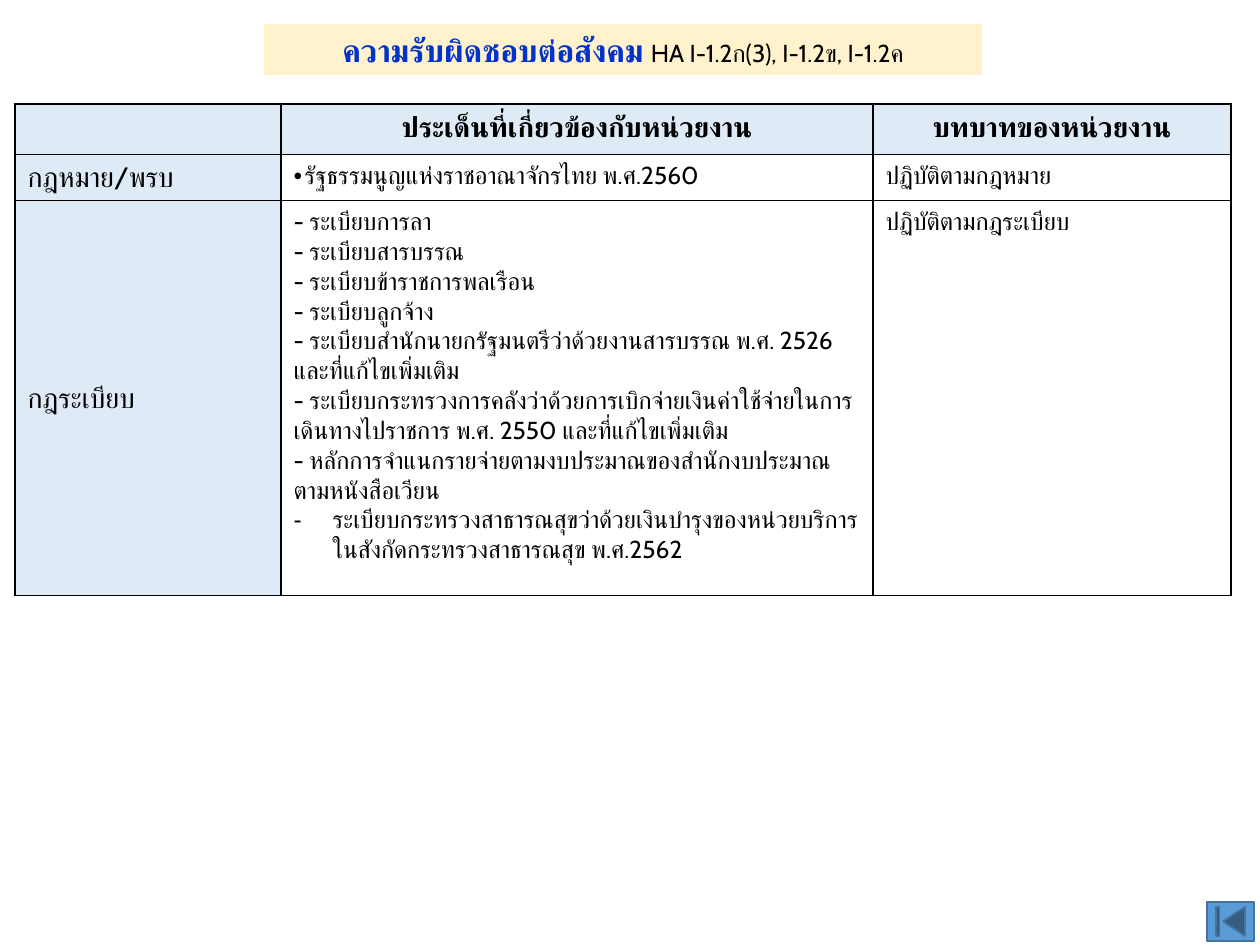
from lxml.etree import SubElement as Sub
from pptx import Presentation
from pptx.dml.color import RGBColor as RGB
from pptx.enum.shapes import MSO_SHAPE as Shape
from pptx.enum.text import MSO_ANCHOR as Anchor, PP_ALIGN as Align
from pptx.oxml.ns import qn
from pptx.util import Emu, Pt

FONT = "Cabin"
BLACK = RGB(0, 0, 0)
WHITE = RGB(255, 255, 255)
BLUE = RGB(0, 0x33, 0xCC)
CREAM = RGB(0xFF, 0xF2, 0xCC)
PALE = RGB(0xDE, 0xEB, 0xF7)
SKY = RGB(0x5B, 0x9B, 0xD5)
STEEL = RGB(0x43, 0x73, 0x9E)

COLS = [266, 592, 358]
ROWS = [46, 46, 395]

LAW = "รัฐธรรมนูญแห่งราชอาณาจักรไทย พ.ศ.2560"
RULES = [
    "- ระเบียบการลา",
    "- ระเบียบสารบรรณ",
    "- ระเบียบข้าราชการพลเรือน",
    "- ระเบียบลูกจ้าง",
    "- ระเบียบสำนักนายกรัฐมนตรีว่าด้วยงานสารบรรณ พ.ศ. 2526 และที่แก้ไขเพิ่มเติม",
    "- ระเบียบกระทรวงการคลังว่าด้วยการเบิกจ่ายเงินค่าใช้จ่ายในการเดินทางไปราชการ"
    " พ.ศ. 2550 และที่แก้ไขเพิ่มเติม",
    "- หลักการจำแนกรายจ่ายตามงบประมาณของสำนักงบประมาณ ตามหนังสือเวียน",
]
FUND = "ระเบียบกระทรวงสาธารณสุขว่าด้วยเงินบำรุงของหน่วยบริการในสังกัดกระทรวงสาธารณสุข พ.ศ.2562"


def px(n):
    return Emu(round(n * 914400 / 126))


def paint(item, color):
    item.fill.solid()
    item.fill.fore_color.rgb = color


def add_run(para, text, size, color=BLACK, bold=False):
    run = para.add_run()
    run.text = text
    for key, val in {"name": FONT, "size": Pt(size), "bold": bold}.items():
        setattr(run.font, key, val)
    run.font.color.rgb = color
    # Thai letters take the complex script font
    Sub(run.font._element, qn("a:cs"), typeface=FONT)


def add_mark(para, char, indent):
    props = para._p.get_or_add_pPr()
    props.set("marL", str(px(indent)))
    props.set("indent", str(-px(indent)))
    Sub(props, qn("a:buFont"), typeface="Arial")
    Sub(props, qn("a:buChar"), char=char)


def add_edges(cell):
    props = cell._tc.get_or_add_tcPr()
    for i, side in enumerate(("lnL", "lnR", "lnT", "lnB")):
        line = props.makeelement(qn("a:" + side), {"w": str(Pt(1))})
        fill = Sub(line, qn("a:solidFill"))
        Sub(fill, qn("a:srgbClr"), val=str(BLACK))
        props.insert(i, line)


def fill_cell(cell, lines, size, color=None, bold=False, align=Align.LEFT, anchor=Anchor.TOP):
    """Each line is a text, or a (text, bullet, indent) group."""
    cell.vertical_anchor = anchor
    if color is None:
        cell.fill.background()
    else:
        paint(cell, color)
    add_edges(cell)
    frame = cell.text_frame
    for i, line in enumerate(lines):
        para = frame.add_paragraph() if i else frame.paragraphs[0]
        para.alignment = align
        text, *mark = (line,) if isinstance(line, str) else line
        if mark:
            add_mark(para, *mark)
        add_run(para, text, size, bold=bold)


def add_title(slide):
    box = slide.shapes.add_textbox(px(264), px(24), px(718), px(51))
    paint(box, CREAM)
    frame = box.text_frame
    frame.word_wrap = True
    frame.vertical_anchor = Anchor.MIDDLE
    para = frame.paragraphs[0]
    para.alignment = Align.CENTER
    add_run(para, "ความรับผิดชอบต่อสังคม ", 18, BLUE, True)
    add_run(para, "HA I-1.2ก(3), I-1.2ข, I-1.2ค", 14)


def add_grid(slide):
    frame = slide.shapes.add_table(len(ROWS), len(COLS), px(15), px(104), px(sum(COLS)), px(sum(ROWS)))
    table = frame.table
    for col, wide in zip(table.columns, COLS):
        col.width = px(wide)
    for row, high in zip(table.rows, ROWS):
        row.height = px(high)

    # Header row
    heads = [[], ["ประเด็นที่เกี่ยวข้องกับหน่วยงาน"], ["บทบาทของหน่วยงาน"]]
    for i, lines in enumerate(heads):
        fill_cell(table.cell(0, i), lines, 16, PALE, True, Align.CENTER)

    # Body rows: topic, items, role
    body = [
        ("กฎหมาย/พรบ", [(LAW, "•", 11)], "ปฏิบัติตามกฎหมาย"),
        ("กฎระเบียบ", RULES + [(FUND, "-", 39)], "ปฏิบัติตามกฎระเบียบ"),
    ]
    for i, (topic, items, role) in enumerate(body, 1):
        fill_cell(table.cell(i, 0), [topic], 16, PALE, anchor=Anchor.MIDDLE)
        fill_cell(table.cell(i, 1), items, 14, WHITE)
        fill_cell(table.cell(i, 2), [role], 14)


def add_button(slide):
    kind = Shape.ACTION_BUTTON_BEGINNING
    button = slide.shapes.add_shape(kind, px(1207), px(902), px(47), px(39))
    button.shadow.inherit = False
    paint(button, SKY)
    button.line.color.rgb = STEEL
    button.line.width = Pt(1)


def main():
    deck = Presentation()
    deck.slide_width, deck.slide_height = px(1260), px(945)
    slide = deck.slides.add_slide(deck.slide_layouts[6])
    add_title(slide)
    add_grid(slide)
    add_button(slide)
    deck.save("out.pptx")


if __name__ == "__main__":
    main()
